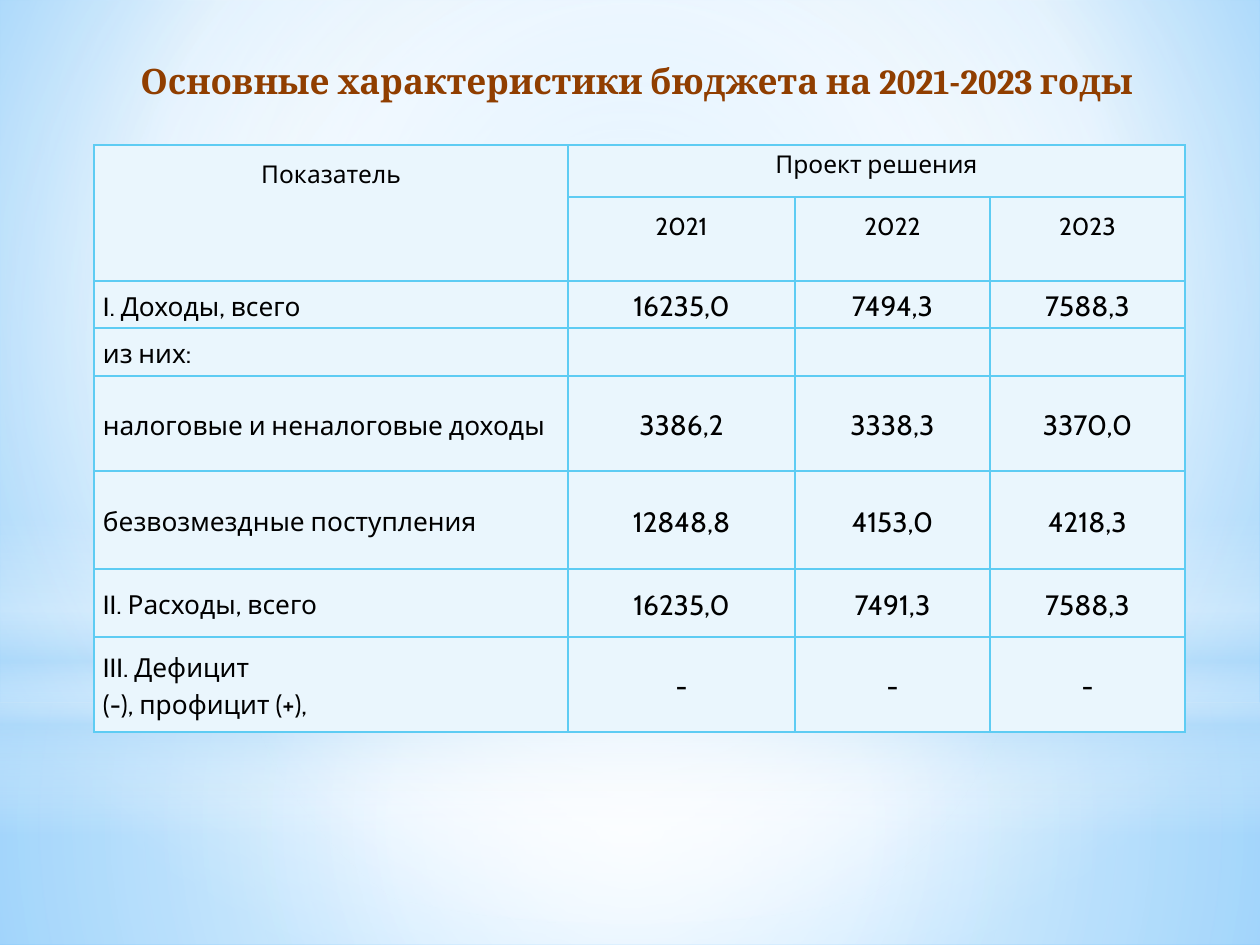
from lxml import etree
from pptx import Presentation
from pptx import util as u
from pptx.dml.color import RGBColor
from pptx.enum import shapes, text
from pptx.oxml import ns

TITLE = "Основные характеристики бюджета на 2021-2023 годы "
HEADER = "Показатель"
GROUP = "Проект решения"
YEARS = ["2021", "2022", "2023"]
ROWS = [
    ("I. Доходы, всего", "16235,0", "7494,3", "7588,3"),
    ("из них:", "", "", ""),
    ("налоговые и неналоговые доходы", "3386,2", "3338,3", "3370,0"),
    ("безвозмездные поступления", "12848,8", "4153,0", "4218,3"),
    ("II. Расходы, всего", "16235,0", "7491,3", "7588,3"),
    ("III. Дефицит\n(-), профицит (+),", "-", "-", "-"),
]
COLUMN_WIDTHS = [474, 227, 195, 195]
ROW_HEIGHTS = [52, 84, 47, 48, 95, 98, 68, 95]

BLACK = RGBColor(0x00, 0x00, 0x00)
BROWN = RGBColor(0x90, 0x3E, 0x00)
WHITE = RGBColor(0xFF, 0xFF, 0xFF)
CELL_BLUE = RGBColor(0xEA, 0xF6, 0xFD)
BORDER_BLUE = RGBColor(0x5E, 0xCC, 0xF3)
HAZE_BLUE = RGBColor(0xB4, 0xDC, 0xFA)
SKY_BLUE = RGBColor(0x9E, 0xD5, 0xFF)
DEEP_BLUE = RGBColor(0x5B, 0xB9, 0xFF)

WIDTH, HEIGHT = 1260, 945
CENTER = (50, 50, 50, 50)
# Gradient stops are (position %, colour, opacity %); no focus means vertical.
BACKGROUND = [(0, SKY_BLUE, 100), (60, WHITE, 100), (100, DEEP_BLUE, 100)]
RECTANGLE, OVAL = shapes.MSO_SHAPE.RECTANGLE, shapes.MSO_SHAPE.OVAL
LAYERS = [
    (RECTANGLE, 703, 242, CENTER,
     [(0, WHITE, 91), (37, WHITE, 76), (100, HAZE_BLUE, 79)]),
    (RECTANGLE, 0, 703, CENTER,
     [(0, WHITE, 89), (48, WHITE, 62), (100, HAZE_BLUE, 79)]),
    (RECTANGLE, 519, 315, None,
     [(0, WHITE, 0), (29, WHITE, 30), (45, HAZE_BLUE, 40),
      (55, WHITE, 26), (65, HAZE_BLUE, 60), (100, WHITE, 0)]),
    (OVAL, 220, 703, CENTER, [(0, WHITE, 100), (56, WHITE, 0)]),
]


def px(*lengths):
    return [u.Emu(round(length * 914400 / 126)) for length in lengths]


def add_child(parent, tag, **attributes):
    child = etree.SubElement(parent, ns.qn(tag))
    for name, value in attributes.items():
        child.set(name, str(value))
    return child


def set_gradient(parent, stops, focus):
    """Replace the solid fill in parent by a gradient."""
    gradient = etree.Element(ns.qn("a:gradFill"), rotWithShape="1")
    stop_list = add_child(gradient, "a:gsLst")
    for position, color, opacity in stops:
        stop = add_child(stop_list, "a:gs", pos=position * 1000)
        color_element = add_child(stop, "a:srgbClr", val=color)
        if opacity < 100:
            add_child(color_element, "a:alpha", val=opacity * 1000)
    if focus:
        circle = add_child(gradient, "a:path", path="circle")
        sides = {side: part * 1000 for side, part in zip("ltrb", focus)}
        add_child(circle, "a:fillToRect", **sides)
    else:
        add_child(gradient, "a:lin", ang=90 * 60000, scaled=0)
    parent.replace(parent.find(ns.qn("a:solidFill")), gradient)


def add_backdrop(slide):
    slide.background.fill.solid()
    set_gradient(slide.element.find(".//" + ns.qn("p:bgPr")), BACKGROUND, (20, 10, 20, 60))
    for kind, top, height, focus, stops in LAYERS:
        shape = slide.shapes.add_shape(kind, *px(0, top, WIDTH, height))
        shape.shadow.inherit = False
        shape.line.fill.background()
        shape.fill.solid()
        set_gradient(shape.element.spPr, stops, focus)


def write(frame, content, size, font="Cabin", color=BLACK, bold=False,
          centered=True, spacing=1.0):
    for index, line in enumerate(content.split("\n")):
        paragraph = frame.add_paragraph() if index else frame.paragraphs[0]
        paragraph.alignment = text.PP_ALIGN.CENTER if centered else text.PP_ALIGN.LEFT
        paragraph.line_spacing = spacing
        if line:
            run = paragraph.add_run()
            run.text = line
            run.font.size = u.Pt(size)
            run.font.name = font
            run.font.bold = bold
            run.font.color.rgb = color


def style_cell(cell):
    cell.margin_left = cell.margin_right = px(9)[0]
    cell.margin_top = cell.margin_bottom = 0
    properties = cell._tc.get_or_add_tcPr()
    for side in ("a:lnL", "a:lnR", "a:lnT", "a:lnB"):
        line = add_child(properties, side, w=u.Pt(1))
        add_child(add_child(line, "a:solidFill"), "a:srgbClr", val=BORDER_BLUE)
    cell.fill.solid()
    cell.fill.fore_color.rgb = CELL_BLUE


def add_budget_table(slide):
    table = slide.shapes.add_table(
        len(ROW_HEIGHTS), len(COLUMN_WIDTHS),
        *px(94, 145, sum(COLUMN_WIDTHS), sum(ROW_HEIGHTS))).table
    table.first_row = table.horz_banding = False
    for column, width in zip(table.columns, px(*COLUMN_WIDTHS)):
        column.width = width
    for row, height in zip(table.rows, px(*ROW_HEIGHTS)):
        row.height = height
    for cell in table.iter_cells():
        style_cell(cell)

    table.cell(0, 0).merge(table.cell(1, 0))
    table.cell(0, 1).merge(table.cell(0, 3))
    write(table.cell(0, 0).text_frame, HEADER, 14, spacing=1.5)
    write(table.cell(0, 1).text_frame, GROUP, 14, spacing=1.15)
    for column, year in enumerate(YEARS, 1):
        write(table.cell(1, column).text_frame, year, 14, spacing=1.5)
    for row, values in enumerate(ROWS, 2):
        for column, value in enumerate(values):
            cell = table.cell(row, column)
            cell.vertical_anchor = text.MSO_ANCHOR.MIDDLE
            write(cell.text_frame, value, 16 if column else 15,
                  centered=column > 0, spacing=1.15)


def main():
    presentation = Presentation()
    presentation.slide_width, presentation.slide_height = px(WIDTH, HEIGHT)
    slide = presentation.slides.add_slide(presentation.slide_layouts[6])
    add_backdrop(slide)
    title = slide.shapes.add_textbox(*px(42, 16, 1197, 129)).text_frame
    title.word_wrap = True
    title.vertical_anchor = text.MSO_ANCHOR.MIDDLE
    write(title, TITLE, 20, font="Cambria", color=BROWN, bold=True)
    add_budget_table(slide)
    presentation.save("out.pptx")


if __name__ == "__main__":
    main()
